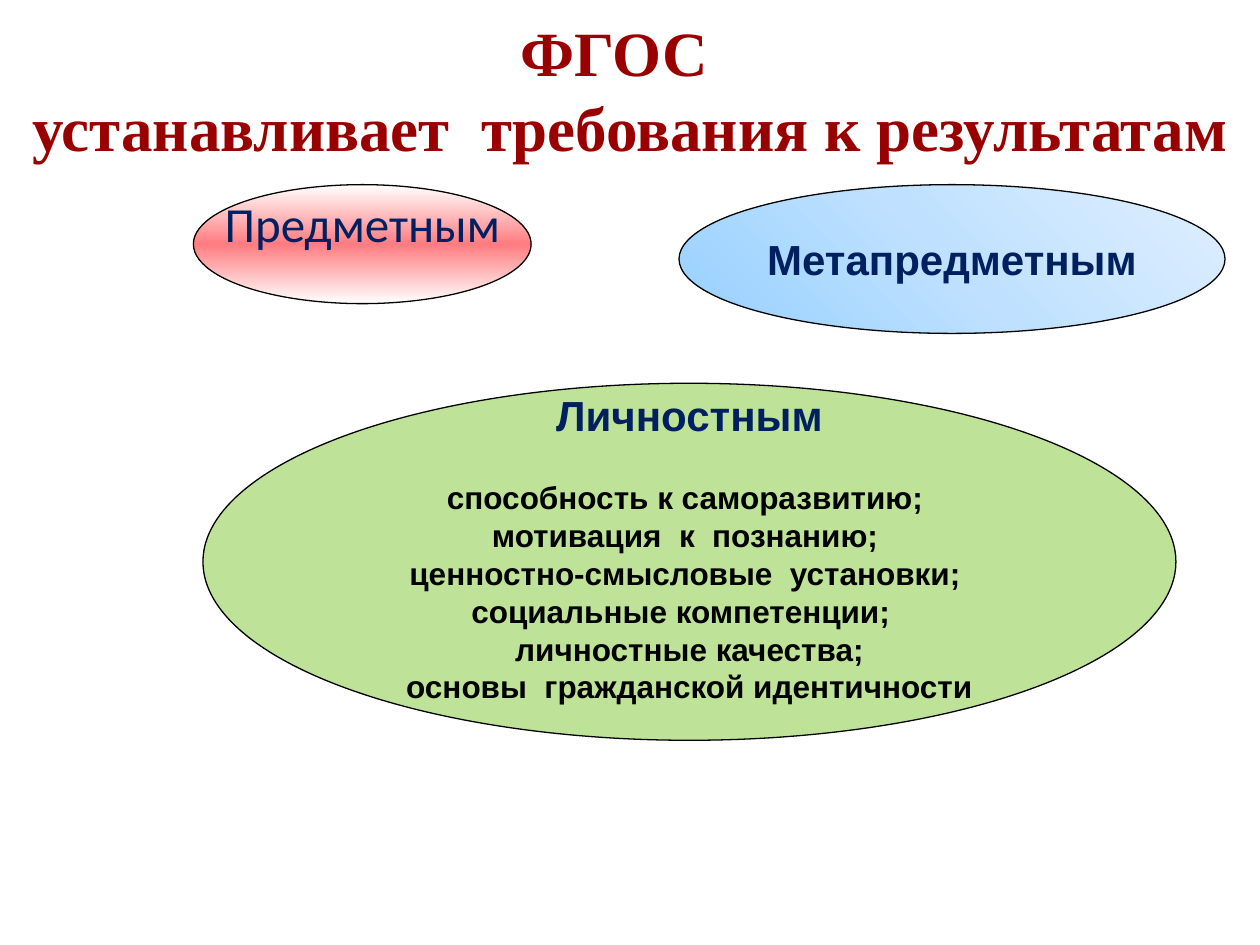
import pptx
import pptx.util
import pptx.dml.color
import pptx.enum.shapes
import pptx.enum.text
import pptx.oxml
import pptx.oxml.ns

Pt = pptx.util.Pt
RGBColor = pptx.dml.color.RGBColor
Anchor = pptx.enum.text.MSO_ANCHOR
Align = pptx.enum.text.PP_ALIGN

BLACK = RGBColor(0x00, 0x00, 0x00)
WHITE = RGBColor(0xFF, 0xFF, 0xFF)
NAVY = RGBColor(0x00, 0x20, 0x60)
MAROON = RGBColor(0x99, 0x00, 0x00)
ROSE = RGBColor(0xFF, 0x7C, 0x80)
SKY = RGBColor(0x96, 0xD0, 0xFF)
PALE = RGBColor(0xBF, 0xE1, 0xFF)
MIST = RGBColor(0xE0, 0xEF, 0xFF)
GREEN = RGBColor(0x92, 0xD0, 0x50)

LINEAR = '<a:lin ang="5400000" scaled="1"/>'
RADIAL = '<a:path path="circle"><a:fillToRect t="100000" r="100000"/></a:path>'

TRAITS = [
    "способность к саморазвитию; ",
    "мотивация  к  познанию; ",
    "ценностно-смысловые  установки; ",
    "социальные компетенции;  ",
    "личностные качества;",
    "основы  гражданской идентичности",
]


def style(para, name, size, color, bold):
    para.alignment = Align.CENTER
    for run in para.runs:
        font = run.font
        font.name = name
        font.size = Pt(size)
        font.color.rgb = color
        font.bold = bold


def shade(shape, colors, mode):
    stops = "".join(
        f'<a:gs pos="{i * 50000}"><a:srgbClr val="{color}"/></a:gs>'
        for i, color in enumerate(colors)
    )
    space = pptx.oxml.ns.nsdecls("a")
    grad = pptx.oxml.parse_xml(
        f'<a:gradFill {space} rotWithShape="1"><a:gsLst>{stops}</a:gsLst>{mode}</a:gradFill>'
    )
    shape.fill.background()
    old = shape._element.spPr.find(pptx.oxml.ns.qn("a:noFill"))
    old.getparent().replace(old, grad)


def oval(slide, box, lines, base=3.6):
    kind = pptx.enum.shapes.MSO_SHAPE.OVAL
    shape = slide.shapes.add_shape(kind, *map(Pt, box))
    shape.shadow.inherit = False
    shape.line.color.rgb = BLACK
    shape.line.width = Pt(0.75)
    frame = shape.text_frame
    frame.word_wrap = False
    frame.vertical_anchor = Anchor.MIDDLE
    frame.margin_bottom = Pt(base)
    frame.text = "\n".join(lines)
    return shape


def subject(slide, box):
    shape = oval(slide, box, ["Предметным"], 28)
    shade(shape, [WHITE, ROSE, WHITE], LINEAR)
    style(shape.text_frame.paragraphs[0], "Calibri", 28, NAVY, False)


def meta(slide, box):
    shape = oval(slide, box, ["Метапредметным"])
    shade(shape, [SKY, PALE, MIST], RADIAL)
    style(shape.text_frame.paragraphs[0], "Arial", 24, NAVY, True)


def person(slide, box):
    shape = oval(slide, box, ["Личностным", *TRAITS], 20)
    shape.fill.solid()
    shape.fill.fore_color.rgb = GREEN
    tint = shape._element.spPr.find(".//" + pptx.oxml.ns.qn("a:srgbClr"))
    tint.append(pptx.oxml.parse_xml(
        f'<a:alpha {pptx.oxml.ns.nsdecls("a")} val="59000"/>'
    ))
    head, *items = shape.text_frame.paragraphs
    style(head, "Arial", 24, NAVY, True)
    head.space_after = Pt(22)
    for item in items:
        style(item, "Arial", 18, BLACK, True)
        item.line_spacing = Pt(21.6)


def title(slide, box):
    frame = slide.shapes.add_textbox(*map(Pt, box)).text_frame
    frame.word_wrap = True
    frame.vertical_anchor = Anchor.MIDDLE
    para = frame.paragraphs[0]
    para.text = "ФГОС  \vустанавливает  требования к результатам"
    style(para, "Times New Roman", 36, MAROON, True)


def main():
    deck = pptx.Presentation()
    deck.slide_width = Pt(720)
    deck.slide_height = Pt(540)
    slide = deck.slides.add_slide(deck.slide_layouts[6])
    subject(slide, (110.5, 105.5, 193, 68))
    meta(slide, (388, 105.5, 312, 85))
    person(slide, (116, 219, 556, 204))
    title(slide, (0, 3.6, 720, 94.4))
    deck.save("out.pptx")


if __name__ == "__main__":
    main()
